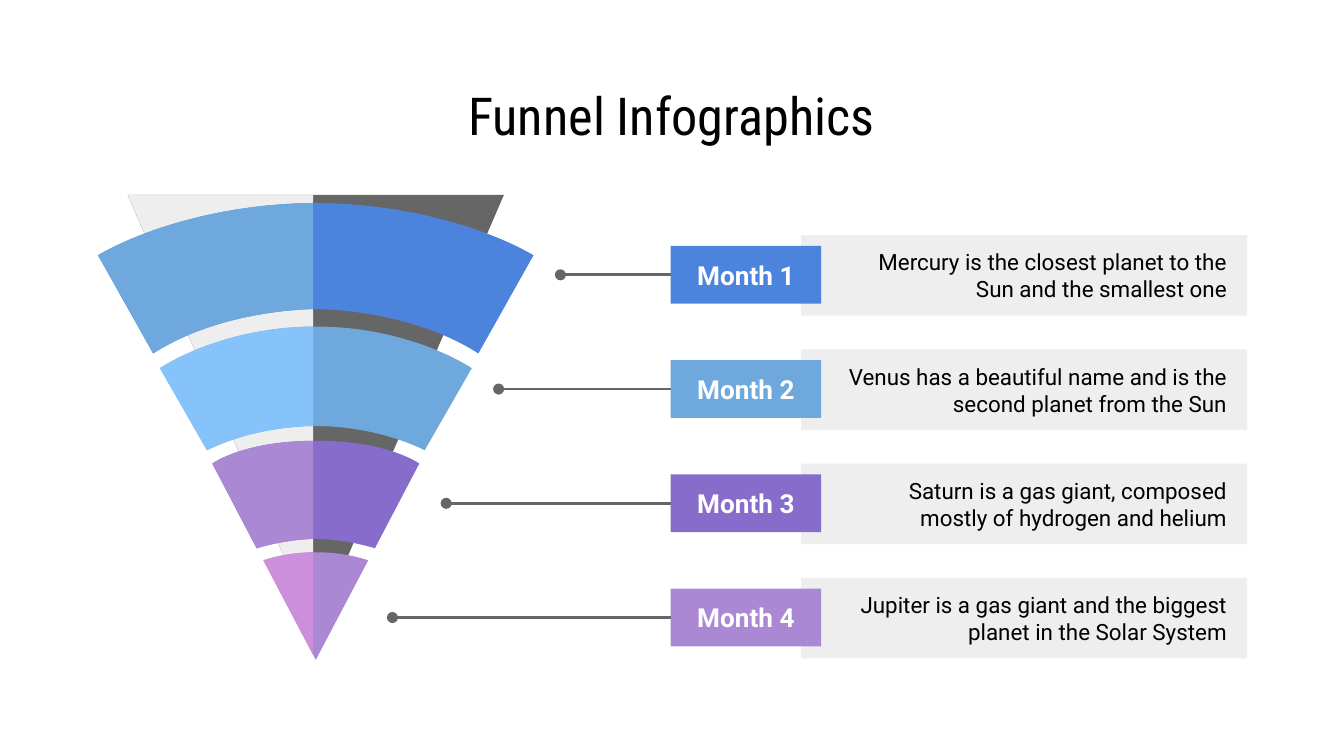
from pptx import Presentation
from pptx.dml.color import RGBColor
from pptx.enum.shapes import MSO_CONNECTOR as Conn, MSO_SHAPE as Shape
from pptx.enum.text import MSO_ANCHOR as Anchor, MSO_AUTO_SIZE as AutoSize, PP_ALIGN as Align
from pptx.oxml.ns import qn
from pptx.util import Inches, Pt
from lxml.etree import SubElement

COLORS = {
    "black": "000000", "white": "FFFFFF", "dark": "666666", "pale": "EEEEEE",
    "blue": "4C84DD", "sky": "6FA8DC", "light_sky": "85C3FA",
    "violet": "886CCC", "lilac": "AB88D3", "pink": "CD8FDB",
}
AXIS, FOLD, PITCH = 2.35, 2.33, 0.85
MONTHS = [
    ("Month 1", "Mercury is the closest planet to the Sun and the smallest one",
     "blue", "sky", 4.17,
     [(AXIS, 1.51), (1.33, 1.52), (0.73, 1.9), (0.73, 1.9)],
     [(1.14, 2.63), (1.64, 2.31), (2.28, 2.3), (AXIS, 2.3)]),
    ("Month 2", "Venus has a beautiful name and is the second planet from the Sun",
     "sky", "light_sky", 3.71,
     [(AXIS, 2.43), (1.64, 2.43), (1.19, 2.74), (1.19, 2.74)],
     [(1.54, 3.35), (1.87, 3.19), (2.21, 3.17), (AXIS, 3.17)]),
    ("Month 3", "Saturn is a gas giant, composed mostly of hydrogen and helium",
     "violet", "lilac", 3.32,
     [(AXIS, 3.28), (1.81, 3.28), (1.58, 3.45), (1.58, 3.45)],
     [(1.91, 4.08), (2.11, 4.02), (2.29, 4.01), (AXIS, 4.01)]),
    ("Month 4", "Jupiter is a gas giant and the biggest planet in the Solar System",
     "lilac", "pink", 2.92,
     [(AXIS, 4.11), (2.21, 4.11), (2.08, 4.13), (1.96, 4.17)],
     [(AXIS, 4.91)] * 4),
]


def rgb(name):
    return RGBColor.from_string(COLORS[name])


def paint(sp, color):
    sp.shadow.inherit = False
    sp.fill.solid()
    sp.fill.fore_color.rgb = rgb(color)
    sp.line.fill.background()


def write(sp, text, size, color, align, font="Roboto", bold=False, left=0.1, right=0.1):
    tf = sp.text_frame
    tf.word_wrap = True
    tf.auto_size = AutoSize.NONE
    tf.vertical_anchor = Anchor.MIDDLE
    tf.margin_left, tf.margin_right = Inches(left), Inches(right)
    tf.margin_top = tf.margin_bottom = Inches(0.1)
    p = tf.paragraphs[0]
    p.alignment = align
    r = p.add_run()
    r.text = text
    r.font.name, r.font.size, r.font.bold = font, Pt(size), bold
    r.font.color.rgb = rgb(color)


def add_box(s, x, y, w, h, color):
    sp = s.shapes.add_shape(Shape.RECTANGLE, Inches(x), Inches(y), Inches(w), Inches(h))
    paint(sp, color)
    return sp


def curve(a, b, c, d, steps=24):
    points = []
    for i in range(steps + 1):
        t = i / steps
        u = 1 - t
        weights = (u ** 3, 3 * u * u * t, 3 * u * t * t, t ** 3)
        points.append(tuple(sum(w * q[k] for w, q in zip(weights, (a, b, c, d)))
                            for k in (0, 1)))
    return points


def clip_left(points):
    kept = []
    for (x1, y1), (x2, y2) in zip(points, points[1:] + points[:1]):
        if x1 <= FOLD:
            kept.append((x1, y1))
        if (x1 <= FOLD) != (x2 <= FOLD):
            kept.append((FOLD, y1 + (y2 - y1) * (FOLD - x1) / (x2 - x1)))
    return kept


def add_outline(s, points, color):
    pts = [(Inches(x), Inches(y)) for x, y in points]
    builder = s.shapes.build_freeform(*pts[0])
    builder.add_line_segments(pts[1:], close=True)
    sp = builder.convert_to_shape()
    paint(sp, color)
    return sp


def add_folded(s, left_half, color, fold_color):
    mirrored = [(2 * AXIS - x, y) for x, y in reversed(left_half)]
    whole = add_outline(s, left_half + mirrored, color)
    fold = add_outline(s, clip_left(left_half), fold_color)
    s.shapes.add_group_shape([whole, fold])


def add_pointer(s, box, x):
    y = box.top + box.height // 2
    line = s.shapes.add_connector(Conn.STRAIGHT, box.left, y, Inches(x), y)
    line.begin_connect(box, 1)
    line.line.color.rgb = rgb("dark")
    line.line.width = Pt(1.5)
    props = line._element.spPr
    SubElement(props.find(qn("a:ln")), qn("a:tailEnd"), type="oval")
    SubElement(props, qn("a:effectLst"))


def add_title(s, text):
    sp = s.shapes.title
    sp.left, sp.top, sp.width, sp.height = map(Inches, (3.12, 0.59, 3.75, 0.53))
    write(sp, text, 28, "black", Align.CENTER, font="Roboto Condensed")


def main():
    prs = Presentation()
    prs.slide_width = Inches(10)
    prs.slide_height = prs.slide_width * 9 // 16
    s = prs.slides.add_slide(prs.slide_layouts[5])
    add_title(s, "Funnel Infographics")

    for i, (_, text, *_) in enumerate(MONTHS):
        sp = add_box(s, 5.96, 1.75 + i * PITCH, 3.32, 0.6, "pale")
        write(sp, text, 12, "black", Align.RIGHT, left=0.35, right=0.15)

    add_folded(s, [(AXIS, 1.45), (0.95, 1.45), (AXIS, 4.69)], "dark", "pale")

    for i, (month, _, color, fold_color, end, top, bottom) in reversed(list(enumerate(MONTHS))):
        add_folded(s, curve(*top) + curve(*bottom), color, fold_color)
        box = add_box(s, 4.99, 1.83 + i * PITCH, 1.12, 0.43, color)
        write(box, month, 14, "white", Align.CENTER, bold=True)
        add_pointer(s, box, end)

    prs.save("out.pptx")


if __name__ == "__main__":
    main()
